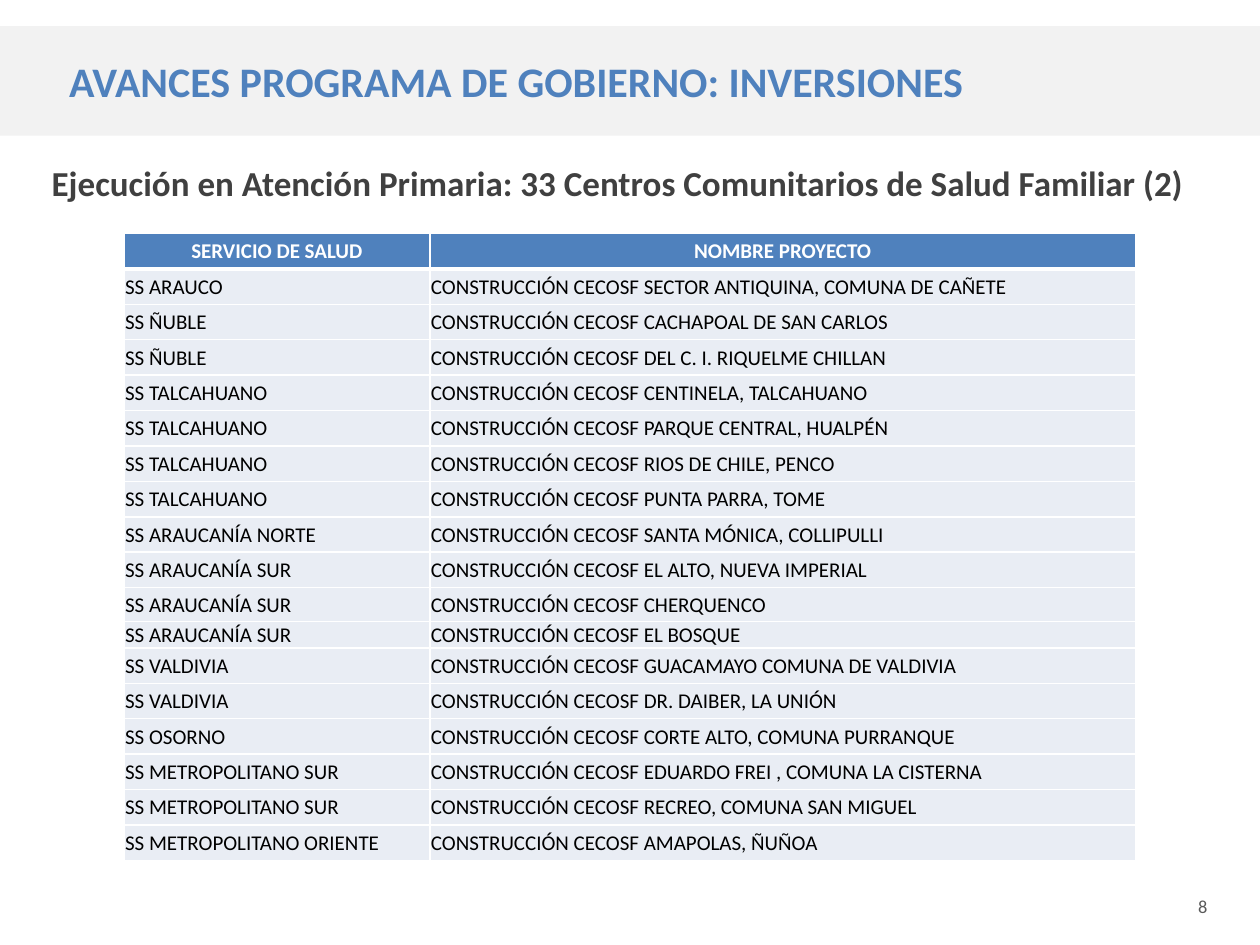
from dataclasses import dataclass

from lxml import etree
from pptx import Presentation
from pptx import util as u
from pptx.dml import color as c
from pptx.enum import text
from pptx.oxml import ns


@dataclass(frozen=True)
class Theme:
    font: str = "Calibri"
    accent: str = "4F81BD"
    band: str = "F2F2F2"
    row: str = "E9EDF4"
    white: str = "FFFFFF"
    black: str = "000000"
    heading: str = "404040"
    muted: str = "595959"
    title_size: float = 24
    heading_size: float = 20
    table_size: float = 12
    number_size: float = 10.5


PROJECTS = [
    ("ARAUCO", "SECTOR ANTIQUINA, COMUNA DE CAÑETE"),
    ("ÑUBLE", "CACHAPOAL DE SAN CARLOS"),
    ("ÑUBLE", "DEL C. I. RIQUELME CHILLAN"),
    ("TALCAHUANO", "CENTINELA, TALCAHUANO"),
    ("TALCAHUANO", "PARQUE CENTRAL, HUALPÉN"),
    ("TALCAHUANO", "RIOS DE CHILE, PENCO"),
    ("TALCAHUANO", "PUNTA PARRA, TOME"),
    ("ARAUCANÍA NORTE", "SANTA MÓNICA, COLLIPULLI"),
    ("ARAUCANÍA SUR", "EL ALTO, NUEVA IMPERIAL"),
    ("ARAUCANÍA SUR", "CHERQUENCO"),
    ("ARAUCANÍA SUR", "EL BOSQUE"),
    ("VALDIVIA", "GUACAMAYO COMUNA DE VALDIVIA"),
    ("VALDIVIA", "DR. DAIBER, LA UNIÓN"),
    ("OSORNO", "CORTE ALTO, COMUNA PURRANQUE"),
    ("METROPOLITANO SUR", "EDUARDO FREI , COMUNA LA CISTERNA"),
    ("METROPOLITANO SUR", "RECREO, COMUNA SAN MIGUEL"),
    ("METROPOLITANO ORIENTE", "AMAPOLAS, ÑUÑOA"),
]
ROW_HEIGHT = 20.25
SHORT_ROWS = {10: 19.4, 11: 15}


class SlideBuilder:
    def __init__(self, deck, theme):
        self.theme = theme
        self.slide = deck.slides.add_slide(deck.slide_layouts[5])

    def set_text(self, frame, wording, size, color, bold=False, align=text.PP_ALIGN.LEFT):
        frame.text = wording
        paragraph = frame.paragraphs[0]
        paragraph.alignment = align
        for run in paragraph.runs:
            run.font.name = self.theme.font
            run.font.size = u.Pt(size)
            run.font.bold = bold
            run.font.color.rgb = c.RGBColor.from_string(color)

    def paint(self, fill, color):
        fill.solid()
        fill.fore_color.rgb = c.RGBColor.from_string(color)

    def title(self, wording, left, top, width, height, indent):
        band = self.slide.shapes.title
        band.left, band.top, band.width, band.height = map(u.Pt, (left, top, width, height))
        self.paint(band.fill, self.theme.band)
        frame = band.text_frame
        frame.auto_size = text.MSO_AUTO_SIZE.NONE
        frame.vertical_anchor = text.MSO_ANCHOR.MIDDLE
        frame.margin_left = u.Pt(indent)
        self.set_text(frame, wording, self.theme.title_size, self.theme.accent, True)

    def label(self, wording, left, top, width, height, size, color, wrap=True, **style):
        frame = self.slide.shapes.add_textbox(*map(u.Pt, (left, top, width, height))).text_frame
        frame.word_wrap = wrap
        self.set_text(frame, wording, size, color, **style)

    def border(self, cell, side, width):
        properties = cell._tc.get_or_add_tcPr()
        line = etree.SubElement(properties, ns.qn(f"a:ln{side}"), w=str(u.Pt(width)))
        fill = etree.SubElement(line, ns.qn("a:solidFill"))
        etree.SubElement(fill, ns.qn("a:srgbClr"), val=self.theme.white)

    def cell(self, cell, wording, row):
        header = row == 0
        cell.margin_left = cell.margin_right = cell.margin_top = u.Pt(0.6)
        cell.margin_bottom = 0
        cell.vertical_anchor = text.MSO_ANCHOR.MIDDLE
        widths = {"L": 1, "R": 1, "T": 3 if row == 1 else 1, "B": 3 if header else 1}
        for side, width in widths.items():
            self.border(cell, side, width)
        self.paint(cell.fill, self.theme.accent if header else self.theme.row)
        self.set_text(cell.text_frame, wording, self.theme.table_size,
                      self.theme.white if header else self.theme.black, header,
                      text.PP_ALIGN.CENTER if header else text.PP_ALIGN.LEFT)

    def table(self, records, left, top, widths, heights):
        grid = self.slide.shapes.add_table(
            len(records), len(widths), u.Pt(left), u.Pt(top),
            u.Pt(sum(widths)), u.Pt(sum(heights))).table
        grid.horz_banding = False
        for column, width in zip(grid.columns, widths):
            column.width = u.Pt(width)
        for row, (record, height) in enumerate(zip(records, heights)):
            grid.rows[row].height = u.Pt(height)
            for column, wording in enumerate(record):
                self.cell(grid.cell(row, column), wording, row)


def main():
    deck = Presentation()
    deck.slide_width, deck.slide_height = u.Pt(720), u.Pt(540)
    theme = Theme()
    builder = SlideBuilder(deck, theme)
    builder.title("AVANCES PROGRAMA DE GOBIERNO: INVERSIONES", 0, 15, 720, 62.5, 39.5)
    builder.label("Ejecución en Atención Primaria: 33 Centros Comunitarios de Salud Familiar (2)",
                  12, 88.5, 682, 36.5, theme.heading_size, theme.heading,
                  bold=True, align=text.PP_ALIGN.CENTER)
    records = [("SERVICIO DE SALUD", "NOMBRE PROYECTO")]
    records += [(f"SS {service}", f"CONSTRUCCIÓN CECOSF {project}")
                for service, project in PROJECTS]
    heights = [SHORT_ROWS.get(row, ROW_HEIGHT) for row in range(len(records))]
    builder.table(records, 70.9, 133.4, (174.8, 403.2), heights)
    builder.label("8", 677.5, 508, 34.5, 21, theme.number_size, theme.muted, wrap=False)
    deck.save("out.pptx")


if __name__ == "__main__":
    main()
